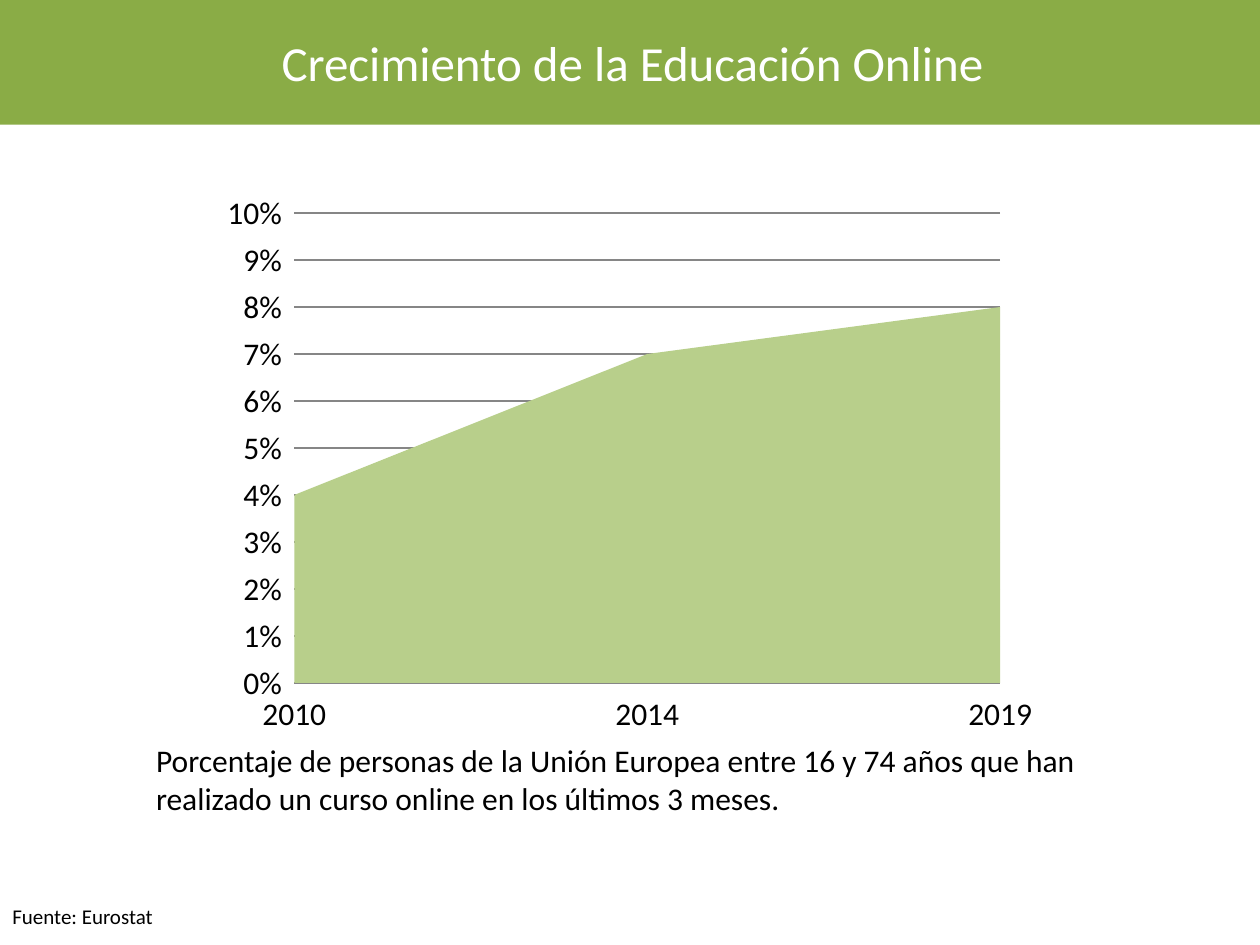
"""Build a slide on the growth of online education with an area chart."""
from dataclasses import dataclass
from typing import Any

from lxml.etree import SubElement as Sub
from pptx import Presentation
from pptx.chart.data import CategoryChartData as Data
from pptx.dml.color import RGBColor as Rgb
from pptx.enum.chart import XL_CHART_TYPE as Kind, XL_TICK_MARK as Tick
from pptx.enum.shapes import MSO_SHAPE as Form
from pptx.enum.text import MSO_ANCHOR as Anchor, MSO_AUTO_SIZE as Auto, PP_ALIGN as Align
from pptx.oxml.ns import qn
from pptx.util import Pt


@dataclass(frozen=True)
class Theme:
    font: str = "Calibri"
    band: Rgb = Rgb(0x8A, 0xAC, 0x46)
    area: Rgb = Rgb(0xB8, 0xCF, 0x8B)
    grid: Rgb = Rgb(0x86, 0x86, 0x86)
    dark: Rgb = Rgb(0, 0, 0)
    light: Rgb = Rgb(255, 255, 255)
    head: float = 28
    body: float = 18
    small: float = 12


@dataclass(frozen=True)
class Box:
    left: float
    top: float
    width: float
    height: float

    def args(self) -> list[int]:
        return [Pt(n) for n in (self.left, self.top, self.width, self.height)]


@dataclass(frozen=True)
class Label:
    text: str
    box: Box
    size: float
    color: Rgb
    align: Align = Align.LEFT


THEME = Theme()
LINE = 33.1
TITLE = Label("Crecimiento de la Educación Online", Box(1.4, 18.7, 720, LINE),
              THEME.head, THEME.light, Align.CENTER)
NOTES = (
    Label("Porcentaje de personas de la Unión Europea entre 16 y 74 años "
          "que han realizado un curso online en los últimos 3 meses.",
          Box(82.1, 428.4, 583.9, LINE), THEME.body, THEME.dark),
    Label("Fuente: Eurostat", Box(0, 506.9, 96.5, LINE), THEME.small, THEME.dark),
)
BAND = Box(0, 0, 720, 71.3)
CHART = Box(120.2, 105.8, 480.2, 319.7)
PLOT = {"x": 0.1, "y": 0.05, "w": 0.84, "h": 0.84}
SHARES = {"2010": 0.04, "2014": 0.07, "2019": 0.08}


def apply(obj: Any, values: dict[str, Any]) -> None:
    for key, value in values.items():
        setattr(obj, key, value)


def style(font: Any, size: float, color: Rgb) -> None:
    apply(font, {"name": THEME.font, "size": Pt(size), "bold": False})
    font.color.rgb = color


def write(shape: Any, label: Label) -> None:
    apply(shape, dict(zip(("left", "top", "width", "height"), label.box.args())))
    frame = shape.text_frame
    apply(frame, {"text": label.text, "word_wrap": True, "auto_size": Auto.NONE,
                  "vertical_anchor": Anchor.MIDDLE,
                  "margin_left": Pt(7.2), "margin_right": Pt(7.2),
                  "margin_top": Pt(3.6), "margin_bottom": Pt(3.6)})
    para = frame.paragraphs[0]
    para.alignment = label.align
    style(para.runs[0].font, label.size, label.color)


def add_band(slide: Any) -> None:
    band = slide.shapes.add_shape(Form.RECTANGLE, *BAND.args())
    band.shadow.inherit = False
    band.fill.solid()
    band.fill.fore_color.rgb = THEME.band
    band.line.fill.background()


def set_plot(chart: Any) -> None:
    plot = chart.element.find(f".//{qn('c:plotArea')}")
    for old in plot.findall(qn("c:layout")):
        plot.remove(old)
    layout = Sub(plot, qn("c:layout"))
    plot.insert(0, layout)
    manual = Sub(layout, qn("c:manualLayout"))
    parts = {"layoutTarget": "inner", "xMode": "edge", "yMode": "edge", **PLOT}
    for tag, value in parts.items():
        Sub(manual, qn(f"c:{tag}")).set("val", str(value))
    for cross in plot.iter(qn("c:crossBetween")):
        cross.set("val", "midCat")


def add_chart(slide: Any) -> None:
    data = Data(number_format="0%")
    data.categories = list(SHARES)
    data.add_series("Series 1", list(SHARES.values()))
    chart = slide.shapes.add_chart(Kind.AREA, *CHART.args(), data).chart
    apply(chart, {"has_legend": False, "has_title": False})
    style(chart.font, THEME.body, THEME.dark)
    chart.plots[0].vary_by_categories = False
    fill = chart.plots[0].series[0].format.fill
    fill.solid()
    fill.fore_color.rgb = THEME.area
    cats, vals = chart.category_axis, chart.value_axis
    for axis in (cats, vals):
        apply(axis, {"major_tick_mark": Tick.OUTSIDE, "minor_tick_mark": Tick.NONE})
        axis.format.line.fill.background()
    cats.has_major_gridlines = False
    apply(vals, {"minimum_scale": 0, "maximum_scale": 0.1, "major_unit": 0.01,
                 "has_major_gridlines": True})
    apply(vals.tick_labels, {"number_format": "0%", "number_format_is_linked": False})
    line = vals.major_gridlines.format.line
    line.color.rgb = THEME.grid
    line.width = Pt(0.75)
    set_plot(chart)


def main() -> None:
    deck = Presentation()
    apply(deck, {"slide_width": Pt(720), "slide_height": Pt(540)})
    slide = deck.slides.add_slide(deck.slide_layouts[5])
    add_band(slide)
    title = slide.shapes.title
    title.element.getparent().append(title.element)
    write(title, TITLE)
    add_chart(slide)
    for note in NOTES:
        write(slide.shapes.add_textbox(*note.box.args()), note)
    deck.save("out.pptx")


if __name__ == "__main__":
    main()
